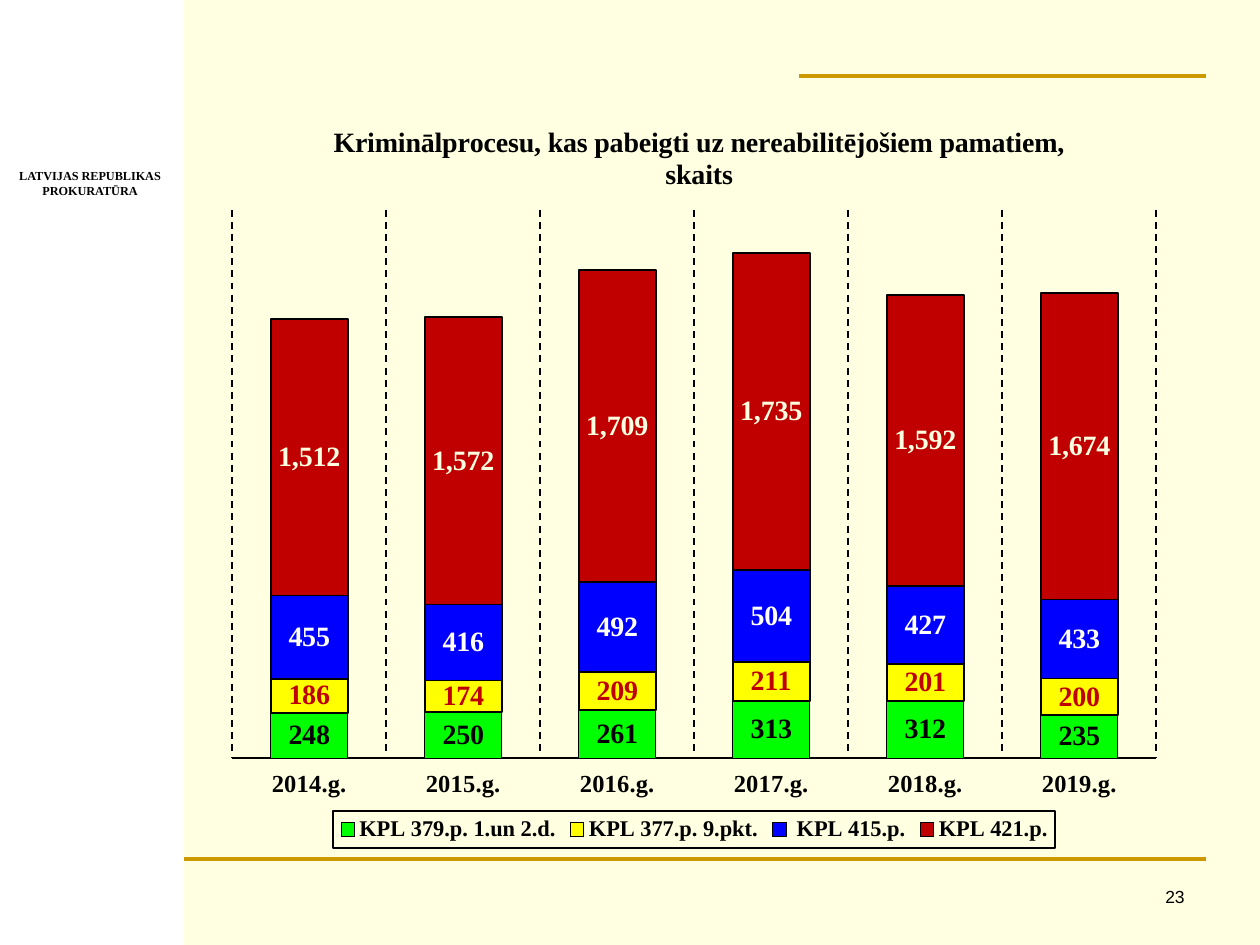
from dataclasses import dataclass

from lxml import etree
from pptx import Presentation
from pptx.chart.data import CategoryChartData
from pptx.dml.color import RGBColor
from pptx.enum.chart import XL_CHART_TYPE, XL_LEGEND_POSITION, XL_TICK_LABEL_POSITION, XL_TICK_MARK
from pptx.enum.dml import MSO_LINE
from pptx.enum.shapes import MSO_CONNECTOR, MSO_SHAPE
from pptx.enum.text import PP_ALIGN
from pptx.oxml import parse_xml
from pptx.oxml.ns import nsdecls, qn
from pptx.util import Inches, Pt

STACKED = XL_CHART_TYPE.COLUMN_STACKED
BOTTOM = XL_LEGEND_POSITION.BOTTOM
LOW = XL_TICK_LABEL_POSITION.LOW
NO_TICK = XL_TICK_MARK.NONE
DASH = MSO_LINE.DASH
STRAIGHT = MSO_CONNECTOR.STRAIGHT
RECTANGLE = MSO_SHAPE.RECTANGLE
CENTER, RIGHT = PP_ALIGN.CENTER, PP_ALIGN.RIGHT


@dataclass(frozen=True)
class Theme:
    cream: str = "FFFFE1"
    white: str = "FFFFFF"
    black: str = "000000"
    gold: str = "CC9900"
    green: str = "00FF00"
    yellow: str = "FFFF00"
    blue: str = "0000FF"
    red: str = "C00000"
    serif: str = "Times New Roman"
    sans: str = "Arial"
    institution_size: float = 7
    number_size: float = 10
    title_size: float = 16
    label_size: float = 16
    axis_size: float = 14
    legend_size: float = 12.8


THEME = Theme()
YEARS = ["2014.g.", "2015.g.", "2016.g.", "2017.g.", "2018.g.", "2019.g."]
# Name, values, fill, label colour, outline width
SERIES = [
    ("KPL 379.p. 1.un 2.d.", (248, 250, 261, 313, 312, 235), THEME.green, THEME.black, 0.5),
    ("KPL 377.p. 9.pkt.", (186, 174, 209, 211, 201, 200), THEME.yellow, THEME.red, 1),
    (" KPL 415.p.", (455, 416, 492, 504, 427, 433), THEME.blue, THEME.white, 1),
    ("KPL 421.p.", (1512, 1572, 1709, 1735, 1592, 1674), THEME.red, THEME.cream, 1),
]


def set_font(font, size, color=THEME.black, name=THEME.serif, bold=True):
    font.size = Pt(size)
    font.bold = bold
    font.name = name
    font.color.rgb = RGBColor.from_string(color)


def set_line(line, color, width):
    line.color.rgb = RGBColor.from_string(color)
    line.width = Pt(width)


def set_fill(fill, color):
    fill.solid()
    fill.fore_color.rgb = RGBColor.from_string(color)


def add_rule(slide, left, right, top):
    rule = slide.shapes.add_connector(STRAIGHT, Inches(left), Inches(top), Inches(right), Inches(top))
    set_line(rule.line, THEME.gold, 2.25)
    etree.SubElement(rule._element.spPr, qn("a:effectLst"))


def add_text(slide, box, lines, alignment, wrap, **font):
    shape = slide.shapes.add_textbox(*map(Inches, box))
    frame = shape.text_frame
    frame.word_wrap = wrap
    frame.text = "\n".join(lines)
    for paragraph in frame.paragraphs:
        paragraph.alignment = alignment
        set_font(paragraph.font, **font)


def add_side_panel(slide, left, top, width, height):
    panel = slide.shapes.add_shape(RECTANGLE, *map(Inches, (left, top, width, height)))
    panel.shadow.inherit = False
    set_fill(panel.fill, THEME.white)
    panel.line.fill.background()
    add_text(slide, (left + 0.05, top + 1.29, 1.33, 0.33),
             ["LATVIJAS REPUBLIKAS", "PROKURATŪRA"], CENTER, False, size=THEME.institution_size)


def make_layout(x, y, width=None, height=None, inner=False):
    """Manual chart layout in fractions of the chart area."""
    sizes = [("x", x), ("y", y), ("w", width), ("h", height)]
    target = '<c:layoutTarget val="inner"/>' if inner else ""
    modes = '<c:xMode val="edge"/><c:yMode val="edge"/>'
    values = "".join(f'<c:{tag} val="{value}"/>' for tag, value in sizes if value is not None)
    return parse_xml(f'<c:layout {nsdecls("c")}><c:manualLayout>{target}{modes}{values}'
                     "</c:manualLayout></c:layout>")


def place(element, layout, index):
    for old in element.findall(qn("c:layout")):
        element.remove(old)
    element.insert(index, layout)


def make_box_format(border):
    outline = f'<a:solidFill><a:srgbClr val="{border}"/></a:solidFill>' if border else "<a:noFill/>"
    return parse_xml(f'<c:spPr {nsdecls("c", "a")}><a:solidFill><a:srgbClr val="{THEME.cream}"/>'
                     f'</a:solidFill><a:ln w="12700">{outline}</a:ln></c:spPr>')


def format_axes(chart):
    category_axis = chart.category_axis
    category_axis.major_tick_mark = category_axis.minor_tick_mark = NO_TICK
    category_axis.tick_label_position = LOW
    set_font(category_axis.tick_labels.font, THEME.axis_size)
    set_line(category_axis.format.line, THEME.black, 1.5)
    category_axis.has_major_gridlines = True
    gridline = category_axis.major_gridlines.format.line
    set_line(gridline, THEME.black, 1)
    gridline.dash_style = DASH

    value_axis = chart.value_axis
    value_axis.minimum_scale, value_axis.maximum_scale = 0, 3000
    value_axis.has_major_gridlines = False
    value_axis.visible = False


def format_series(plot):
    plot.gap_width = plot.overlap = 100
    plot.vary_by_categories = False
    for series, (_, _, fill, label_color, width) in zip(plot.series, SERIES):
        set_fill(series.format.fill, fill)
        set_line(series.format.line, THEME.black, width)
        labels = series.data_labels
        labels.show_value = True
        labels.number_format = "#,##0"
        labels.number_format_is_linked = False
        set_font(labels.font, THEME.label_size, label_color)


def add_case_chart(slide, left, top, width, height):
    data = CategoryChartData()
    data.categories = YEARS
    for name, values, *_ in SERIES:
        data.add_series(name, values)
    chart = slide.shapes.add_chart(STACKED, *map(Inches, (left, top, width, height)), data).chart
    set_font(chart.font, 10, bold=False)

    # Title
    chart.has_title = True
    title = chart.chart_title
    title.include_in_layout = False
    title.text_frame.text = "Kriminālprocesu, kas pabeigti uz nereabilitējošiem pamatiem, skaits"
    set_font(title.text_frame.paragraphs[0].font, THEME.title_size)
    place(title._element, make_layout(0.12, 0.03), 1)

    # Columns and axes
    format_series(chart.plots[0])
    format_axes(chart)
    chart_space = chart._chartSpace
    place(chart_space.chart.plotArea, make_layout(0.02, 0.15, 0.96, 0.73, inner=True), 0)

    # Legend
    chart.has_legend = True
    legend = chart.legend
    legend.position = BOTTOM
    legend.include_in_layout = False
    set_font(legend.font, THEME.legend_size)
    place(legend._element, make_layout(0.125, 0.95, 0.75, 0.05), 1)

    # Backgrounds come just before the text properties
    for element, border in ((chart_space, None), (legend._element, THEME.black)):
        element.find(qn("c:txPr")).addprevious(make_box_format(border))


def main():
    presentation = Presentation()
    presentation.slide_width, presentation.slide_height = Inches(10), Inches(7.5)
    slide = presentation.slides.add_slide(presentation.slide_layouts[6])
    set_fill(slide.background.fill, THEME.cream)
    add_side_panel(slide, 0, 0, 1.46, 7.5)
    add_rule(slide, 1.46, 9.57, 6.82)
    add_rule(slide, 6.34, 9.57, 0.6)
    add_text(slide, (7.42, 6.98, 2.08, 0.35), ["23"], RIGHT, True,
             size=THEME.number_size, name=THEME.sans, bold=False)
    add_case_chart(slide, 1.69, 0.77, 7.64, 5.97)
    presentation.save("out.pptx")


if __name__ == "__main__":
    main()
